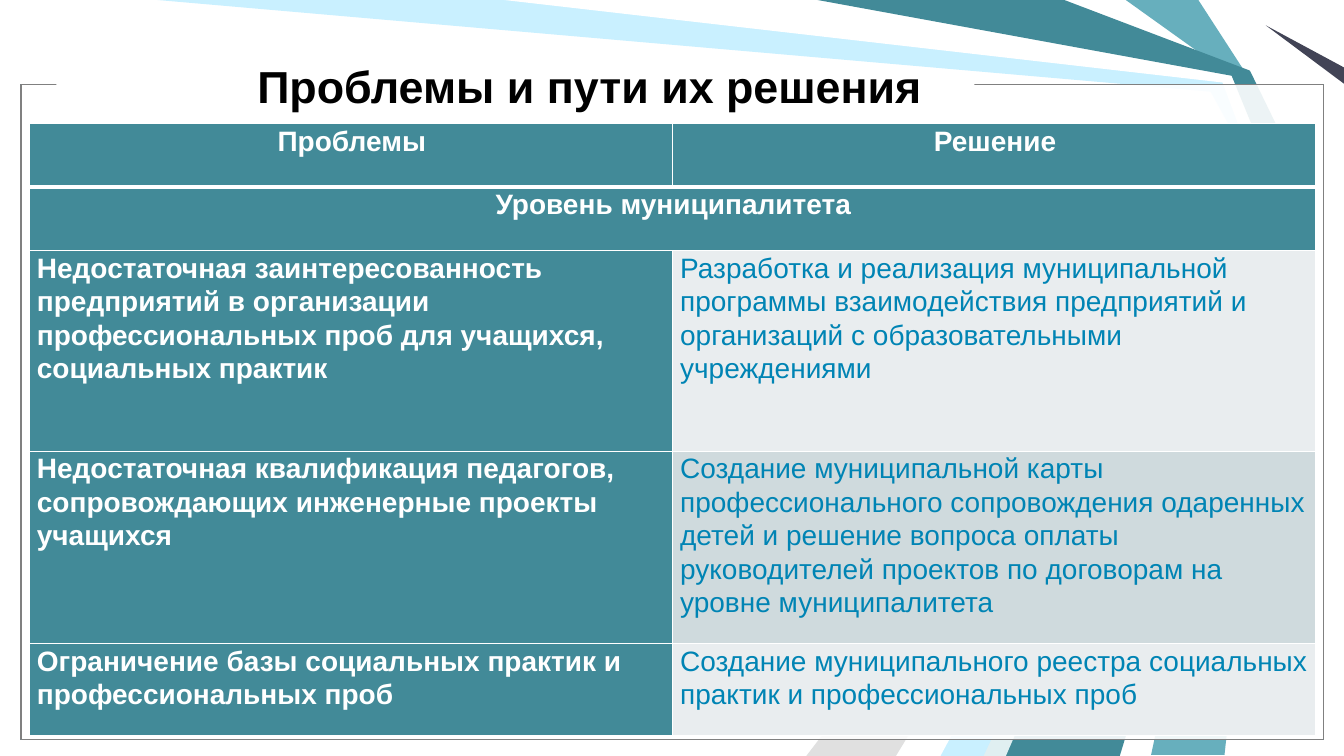
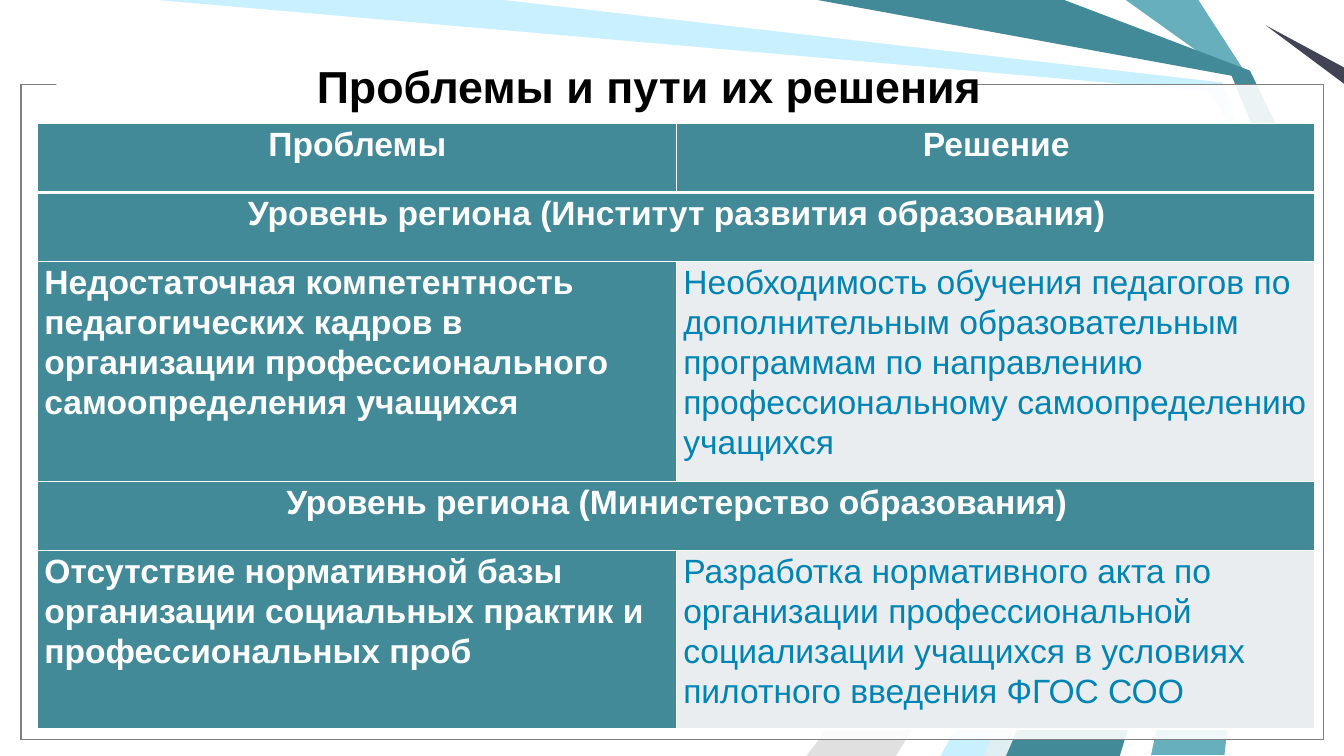
"""Builds two slides with tables of problems and their solutions."""
from dataclasses import dataclass

from lxml.etree import SubElement
from pptx import Presentation
from pptx.dml.color import RGBColor as RGB
from pptx.enum.shapes import MSO_SHAPE as Shp
from pptx.enum.text import MSO_ANCHOR as Anchor, PP_ALIGN as Align
from pptx.oxml.ns import qn
from pptx.shapes.base import BaseShape
from pptx.slide import Slide
from pptx.table import _Cell as Cell
from pptx.text.text import TextFrame
from pptx.util import Cm, Pt


@dataclass(frozen=True)
class Theme:
    font: str = "Arial"
    title_size: int = 32
    line_spacing: float = 1.07
    thin: float = 1
    thick: float = 3
    frame_line: float = 0.75
    frame_alpha: int = 69
    black: str = "000000"
    white: str = "FFFFFF"
    teal: str = "428A98"
    aqua: str = "67AFBD"
    sky: str = "C9F0FF"
    pale: str = "E0EFF1"
    silver: str = "E0E0E0"
    grey: str = "808080"
    dark: str = "424456"
    blue: str = "0084B4"
    row_light: str = "E9EDEF"
    row_dark: str = "CFDADD"


@dataclass(frozen=True)
class Box:
    left: float
    top: float
    width: float
    height: float

    def emu(self) -> tuple[int, int, int, int]:
        return Cm(self.left), Cm(self.top), Cm(self.width), Cm(self.height)


@dataclass(frozen=True)
class Ray:
    color: str
    points: tuple[tuple[float, float], ...]


@dataclass(frozen=True)
class Row:
    height: float
    problem: str
    solution: str = ""


@dataclass(frozen=True)
class Page:
    title_box: Box
    left: float
    col_width: float
    size: int
    margin: float
    rows: tuple[Row, ...]


T = Theme()
WIDTH, HEIGHT = 33.87, 19.05
TABLE_TOP = 3.12
RIGHT_MARGIN = 0.15
TITLE = "Проблемы и пути их решения "
FRAME = Box(0.53, 2.13, 32.82, 16.51)
TITLE_GAP = Box(1.42, 1.88, 23.14, 0.43)

RAYS = (
    Ray(T.aqua, ((30.2, 0), (31.47, 1.96), (32.46, 4.24), (30.86, 19.02),
                 (29.01, 19.02), (32.18, 4.24), (31.04, 1.91), (28.37, 0))),
    Ray(T.sky, ((3.96, 0), (12.98, 0), (30.94, 1.98), (31.9, 4.29),
                (25.12, HEIGHT), (23.42, HEIGHT), (31.65, 4.39), (30.51, 2.31))),
    Ray(T.silver, ((22.58, HEIGHT), (31.39, 4.6), (20.32, HEIGHT))),
    Ray(T.white, ((12.7, 0), (30.81, 2.08), (31.57, 4.11), (22.86, HEIGHT),
                  (23.7, HEIGHT), (31.85, 4.01), (31.04, 1.91), (20.32, 0))),
    Ray(T.white, ((31.32, 0), (31.04, 0.43), (33.12, 3.05), (WIDTH, 3.18),
                  (WIDTH, 2.54), (31.32, 0.43), (31.57, 0))),
    Ray(T.dark, ((WIDTH, 2.11), (31.9, 0.64), (WIDTH, 1.7))),
    Ray(T.teal, ((20.6, 0), (26.82, 0), (31.5, 1.78), (32.72, 4.29),
                 (28.22, HEIGHT), (24.84, HEIGHT), (31.9, 4.01), (31.04, 1.91))),
    Ray(T.pale, ((24.79, HEIGHT), (31.57, 4.65), (25.35, HEIGHT))),
)

PAGES = (
    Page(Box(3.35, 0.56, 23.34, 3.18), 0.74, 16.21, 20, 0.19, (
        Row(1.6, "Проблемы", "Решение"),
        Row(1.6, "Уровень муниципалитета"),
        Row(5.05, "Недостаточная заинтересованность предприятий в организации "
                  "профессиональных проб для учащихся, социальных практик",
            "Разработка и реализация муниципальной программы взаимодействия "
            "предприятий и организаций с образовательными учреждениями"),
        Row(4.85, "Недостаточная квалификация педагогов, сопровождающих "
                  "инженерные проекты учащихся",
            "Создание муниципальной карты профессионального сопровождения "
            "одаренных детей и решение вопроса оплаты руководителей проектов "
            "по договорам на уровне муниципалитета"),
        Row(2.31, "Ограничение базы социальных практик и профессиональных проб",
            "Создание муниципального реестра социальных практик и "
            "профессиональных проб"),
    )),
    Page(Box(6.73, 0.56, 19.58, 3.18), 0.94, 16.1, 24, 0.18, (
        Row(1.73, "Проблемы", "Решение"),
        Row(1.73, "Уровень региона (Институт развития образования)"),
        Row(5.56, "Недостаточная компетентность педагогических кадров в "
                  "организации профессионального самоопределения учащихся",
            "Необходимость обучения педагогов по дополнительным "
            "образовательным программам по направлению профессиональному "
            "самоопределению учащихся"),
        Row(1.73, "Уровень региона (Министерство образования)"),
        Row(4.5, "Отсутствие нормативной базы организации социальных практик "
                 "и профессиональных проб",
            "Разработка нормативного акта по организации профессиональной "
            "социализации учащихся в условиях пилотного введения ФГОС СОО"),
    )),
)


def fill_shape(sp: BaseShape, color: str) -> None:
    sp.shadow.inherit = False
    sp.fill.solid()
    sp.fill.fore_color.rgb = RGB.from_string(color)
    sp.line.fill.background()


def draw_ray(s: Slide, ray: Ray) -> None:
    start, *rest = [(Cm(x), Cm(y)) for x, y in ray.points]
    builder = s.shapes.build_freeform(*start)
    builder.add_line_segments(rest, close=True)
    fill_shape(builder.convert_to_shape(), ray.color)


def draw_rect(s: Slide, box: Box, line: str = "") -> None:
    sp = s.shapes.add_shape(Shp.RECTANGLE, *box.emu())
    fill_shape(sp, T.white)
    if line:
        clr = sp.fill._xPr.find(qn("a:solidFill"))[0]
        SubElement(clr, qn("a:alpha"), val=str(T.frame_alpha * 1000))
        sp.line.color.rgb = RGB.from_string(line)
        sp.line.width = Pt(T.frame_line)


def draw_background(s: Slide) -> None:
    for ray in RAYS:
        draw_ray(s, ray)
    for line in (T.blue, T.grey):
        draw_rect(s, FRAME, line)
    draw_rect(s, TITLE_GAP)


def write(tf: TextFrame, text: str, size: int, color: str, bold: bool,
          align: Align) -> None:
    tf.word_wrap = True
    p = tf.paragraphs[0]
    p.alignment = align
    r = p.add_run()
    r.text = text
    r.font.name = T.font
    r.font.size = Pt(size)
    r.font.bold = bold
    r.font.color.rgb = RGB.from_string(color)


def draw_title(s: Slide, box: Box) -> None:
    tf = s.shapes.add_textbox(*box.emu()).text_frame
    tf.vertical_anchor = Anchor.MIDDLE
    write(tf, TITLE, T.title_size, T.black, True, Align.CENTER)


def set_borders(cell: Cell, top: float, bottom: float) -> None:
    tc_pr = cell._tc.get_or_add_tcPr()
    for side, width in zip("LRTB", (T.thin, T.thin, top, bottom)):
        ln = SubElement(tc_pr, qn(f"a:ln{side}"), w=str(Pt(width)))
        fill = SubElement(ln, qn("a:solidFill"))
        SubElement(fill, qn("a:srgbClr"), val=T.white)


def draw_table(s: Slide, page: Page) -> None:
    box = Box(page.left, TABLE_TOP, 2 * page.col_width,
              sum(row.height for row in page.rows))
    table = s.shapes.add_table(len(page.rows), 2, *box.emu()).table
    for col in table.columns:
        col.width = Cm(page.col_width)
    for i, row in enumerate(page.rows):
        table.rows[i].height = Cm(row.height)
        centred = i == 0 or not row.solution
        band = T.row_dark if i % 2 else T.row_light
        for j, text in enumerate((row.problem, row.solution)):
            cell = table.cell(i, j)
            strong = centred or j == 0
            cell.margin_left, cell.margin_right = Cm(page.margin), Cm(RIGHT_MARGIN)
            cell.margin_top = cell.margin_bottom = 0
            set_borders(cell, T.thick if i == 1 else T.thin,
                        T.thick if i == 0 else T.thin)
            cell.fill.solid()
            cell.fill.fore_color.rgb = RGB.from_string(T.teal if strong else band)
            if text:
                write(cell.text_frame, text, page.size,
                      T.white if strong else T.blue, strong,
                      Align.CENTER if centred else Align.LEFT)
                cell.text_frame.paragraphs[0].line_spacing = T.line_spacing
        if not row.solution:
            table.cell(i, 0).merge(table.cell(i, 1))


def main() -> None:
    prs = Presentation()
    prs.slide_width, prs.slide_height = Cm(WIDTH), Cm(HEIGHT)
    for page in PAGES:
        s = prs.slides.add_slide(prs.slide_layouts[6])
        draw_background(s)
        draw_title(s, page.title_box)
        draw_table(s, page)
    prs.save("out.pptx")


if __name__ == "__main__":
    main()
